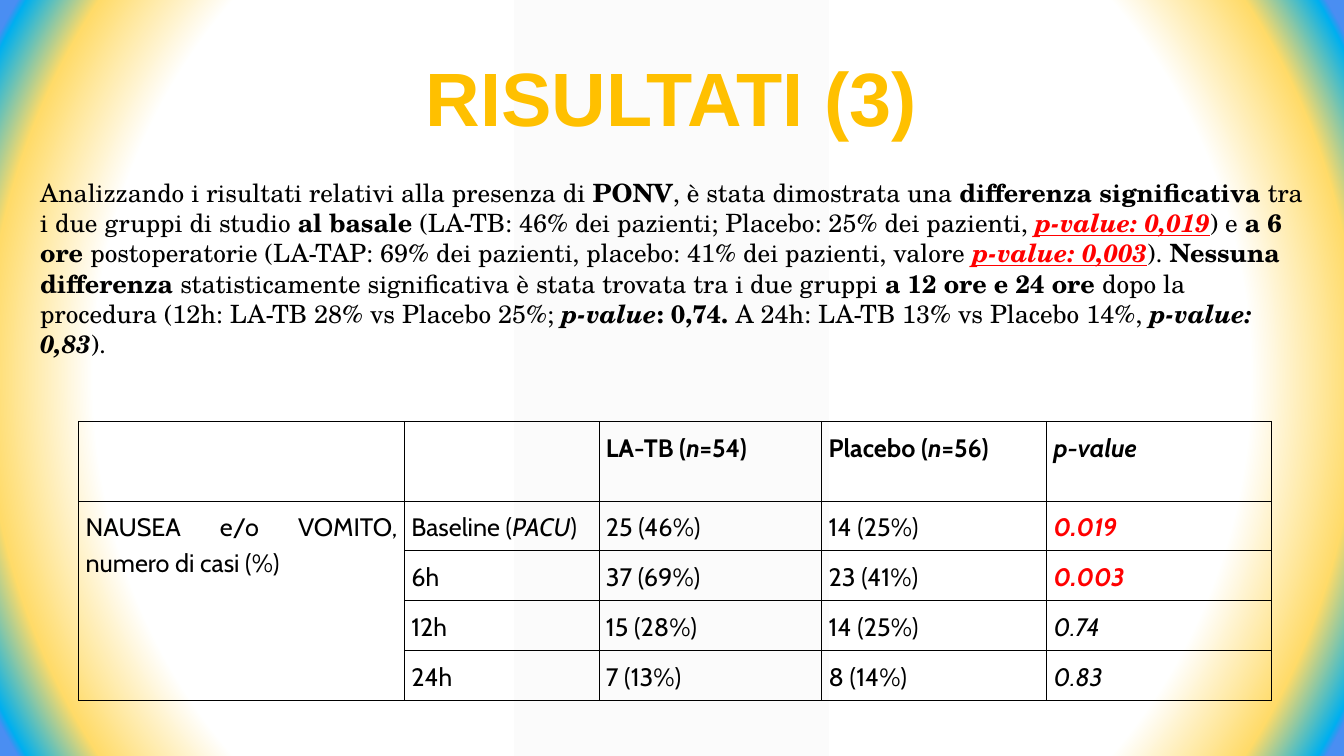
from pptx import Presentation
from pptx import util as u
from pptx.dml.color import RGBColor
from pptx.enum import shapes, text
from pptx.oxml import parse_xml
from pptx.oxml.ns import nsdecls

WIDE, HIGH = 13.33, 7.5
BLACK, RED, GOLD = "000000", "FF0000", "FFC000"
STOPS = [(75, "FFFFFF", 100), (89, "FFDB69", 57), (97, "00B0F0", 100), (98, "4A8EF2", 100)]

BODY = [
    ("Analizzando i risultati relativi alla presenza di ", ""),
    ("PONV", "b"),
    (", è stata dimostrata una ", ""),
    ("differenza significativa ", "b"),
    ("tra i due gruppi di studio ", ""),
    ("al basale ", "b"),
    ("(LA-TB: 46% dei pazienti; Placebo: 25% dei pazienti, ", ""),
    ("p-value: 0,019", "biur"),
    (") e ", ""),
    ("a 6 ore ", "b"),
    ("postoperatorie (LA-TAP: 69% dei pazienti, placebo: 41% dei pazienti, valore ", ""),
    ("p-value: 0,003", "biur"),
    ("). ", ""),
    ("Nessuna differenza ", "b"),
    ("statisticamente significativa è stata trovata tra i due gruppi ", ""),
    ("a 12 ore e 24 ore ", "b"),
    ("dopo la procedura (12h: LA-TB 28% vs Placebo 25%; ", ""),
    ("p-value", "bi"),
    (": 0,74. ", "b"),
    ("A 24h: LA-TB 13% vs Placebo 14%, ", ""),
    ("p-value: 0,83", "bi"),
    (").", ""),
]

COLS = [3.23, 1.93, 2.21, 2.23, 2.23]
ROWS = [0.79] + [0.494] * 4
CELLS = [
    [[], [],
     [("LA-TB (", "b"), ("n", "bi"), ("=54)", "b")],
     [("Placebo (", "b"), ("n", "bi"), ("=56)", "b")],
     [("p-value", "bi")]],
    [[("NAUSEA e/o VOMITO, numero di casi (%)", "")],
     [("Baseline (", ""), ("PACU", "i"), (")", "")],
     [("25 (46%)", "")], [("14 (25%)", "")], [("0.019", "bir")]],
    [[], [("6h", "")], [("37 (69%)", "")], [("23 (41%)", "")], [("0.003", "bir")]],
    [[], [("12h", "")], [("15 (28%)", "")], [("14 (25%)", "")], [("0.74", "i")]],
    [[], [("24h", "")], [("7 (13%)", "")], [("8 (14%)", "")], [("0.83", "i")]],
]


def color(code):
    return RGBColor.from_string(code)


def inches(box):
    return [u.Inches(n) for n in box]


def write(para, runs, face, size, tint=BLACK):
    for words, style in runs:
        run = para.add_run()
        run.text = words
        font = run.font
        font.name, font.size = face, u.Pt(size)
        font.bold, font.italic, font.underline = (k in style for k in "biu")
        font.color.rgb = color(RED if "r" in style else tint)


def backdrop(slide, box):
    stops = "".join(
        f'<a:gs pos="{pos * 1000}"><a:srgbClr val="{code}">'
        f'<a:alpha val="{alpha * 1000}"/></a:srgbClr></a:gs>'
        for pos, code, alpha in STOPS)
    slide.element.cSld.insert(0, parse_xml(
        f'<p:bg {nsdecls("p", "a")}><p:bgPr><a:gradFill rotWithShape="1">'
        f'<a:gsLst>{stops}</a:gsLst><a:path path="circle">'
        '<a:fillToRect l="50000" t="50000" r="50000" b="50000"/></a:path>'
        '</a:gradFill><a:effectLst/></p:bgPr></p:bg>'))
    band = slide.shapes.add_shape(shapes.MSO_SHAPE.PARALLELOGRAM, *inches(box))
    band.adjustments[0] = 0
    band.shadow.inherit = False
    band.line.fill.background()
    band.fill.solid()
    band.fill.fore_color.rgb = color("F2F2F2")
    tone = band.fill._xPr.find(".//{*}srgbClr")
    tone.append(parse_xml(f'<a:alpha {nsdecls("a")} val="30000"/>'))


def label(slide, box, runs, face, size, tint=BLACK, wrap=True, align=text.PP_ALIGN.LEFT):
    frame = slide.shapes.add_textbox(*inches(box)).text_frame
    frame.word_wrap = wrap
    frame.auto_size = text.MSO_AUTO_SIZE.SHAPE_TO_FIT_TEXT
    para = frame.paragraphs[0]
    para.alignment = align
    write(para, runs, face, size, tint)


def border(cell):
    props = cell._tc.get_or_add_tcPr()
    for side in "LRTB":
        props.append(parse_xml(
            f'<a:ln{side} {nsdecls("a")} w="{u.Pt(0.6)}"><a:solidFill>'
            f'<a:srgbClr val="{BLACK}"/></a:solidFill></a:ln{side}>'))


def grid(slide, box):
    table = slide.shapes.add_table(len(ROWS), len(COLS), *inches(box)).table
    table.first_row = table.horz_banding = False
    for col, size in zip(table.columns, COLS):
        col.width = u.Inches(size)
    for row, size in zip(table.rows, ROWS):
        row.height = u.Inches(size)
    table.cell(1, 0).merge(table.cell(len(ROWS) - 1, 0))
    for r, line in enumerate(CELLS):
        for c, runs in enumerate(line):
            cell = table.cell(r, c)
            border(cell)
            cell.fill.background()
            cell.margin_left = cell.margin_right = u.Inches(0.07)
            cell.margin_top = cell.margin_bottom = u.Inches(0.07)
            para = cell.text_frame.paragraphs[0]
            para.alignment = text.PP_ALIGN.JUSTIFY
            para.line_spacing = 1.15
            write(para, runs, "Cabin", 18)


def main():
    deck = Presentation()
    deck.slide_width, deck.slide_height = inches((WIDE, HIGH))
    slide = deck.slides.add_slide(deck.slide_layouts[6])
    backdrop(slide, (5.1, 0, 3.12, HIGH))
    label(slide, (4.1, 0.46, 5.12, 1.01), [("RISULTATI (3)", "b")], "Arial", 54,
          GOLD, False, text.PP_ALIGN.CENTER)
    label(slide, (0.3, 1.71, 12.78, 1.92), BODY, "TeX Gyre Schola", 18)
    grid(slide, (0.78, 4.18, sum(COLS), sum(ROWS)))
    deck.save("out.pptx")


if __name__ == "__main__":
    main()
